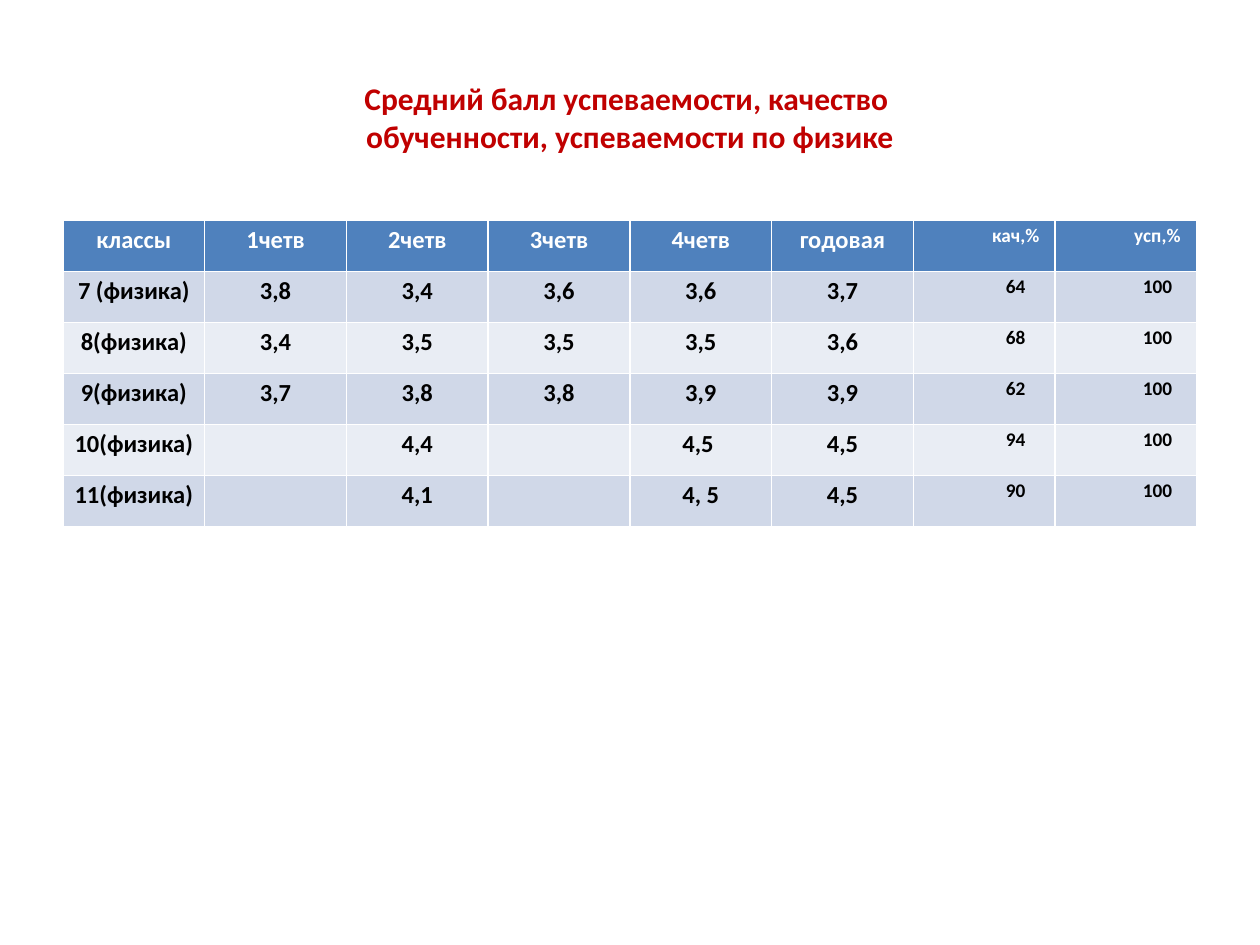
from dataclasses import dataclass

from pptx import Presentation, util as u
from pptx.dml.color import RGBColor
from pptx.enum import text
from pptx.table import _Cell

COLORS = {
    "title": "C00000",
    "header": "4F81BD",
    "header_text": "FFFFFF",
    "body_text": "000000",
    "odd_row": "D0D8E8",
    "even_row": "E9EDF4",
}
FONT = "Calibri"


@dataclass(frozen=True)
class ColumnStyle:
    size: float
    indent: float = 0


GRADE = ColumnStyle(14)
PERCENT = ColumnStyle(11, 36)
COLUMNS = [GRADE] * 6 + [PERCENT] * 2

ROWS = [
    ["классы", "1четв", "2четв", "3четв", "4четв", "годовая", "кач,%", "усп,%"],
    ["7 (физика)", "3,8", "3,4", "3,6", "3,6", "3,7", "64", "100"],
    ["8(физика)", "3,4", "3,5", "3,5", "3,5", "3,6", "68", "100"],
    ["9(физика)", "3,7", "3,8", "3,8", "3,9", "3,9", "62", "100"],
    ["10(физика)", "", "4,4", "", "4,5 ", "4,5", "94", "100"],
    ["11(физика)", "", "4,1", "", "4, 5", "4,5", "90", "100"],
]


def set_font(p, size: float, color: str) -> None:
    p.alignment = text.PP_ALIGN.CENTER
    p.font.name = FONT
    p.font.size = u.Pt(size)
    p.font.bold = True
    p.font.color.rgb = RGBColor.from_string(COLORS[color])


def fill_cell(cell: _Cell, value: str, style: ColumnStyle, fill: str, color: str) -> None:
    cell.fill.solid()
    cell.fill.fore_color.rgb = RGBColor.from_string(COLORS[fill])
    cell.margin_left = cell.margin_right = u.Pt(5.4)
    cell.margin_top = cell.margin_bottom = 0
    cell.text = value
    p = cell.text_frame.paragraphs[0]
    set_font(p, style.size, color)
    p.line_spacing = 1.15
    if style.indent:
        pPr = p._p.get_or_add_pPr()
        pPr.set("marL", str(u.Pt(style.indent)))
        pPr.set("indent", "0")


def add_title(s) -> None:
    sp = s.shapes.title
    sp.left, sp.top, sp.width, sp.height = u.Pt(36), u.Pt(21.6), u.Pt(648), u.Pt(90)
    tf = sp.text_frame
    tf.vertical_anchor = text.MSO_ANCHOR.MIDDLE
    tf.text = "Средний балл успеваемости, качество \vобученности, успеваемости по физике"
    set_font(tf.paragraphs[0], 18, "title")


def add_grades(s) -> None:
    table = s.shapes.add_table(
        len(ROWS), len(COLUMNS), u.Pt(36), u.Pt(126), u.Pt(648), u.Pt(175)
    ).table
    for i, row in enumerate(ROWS):
        if i == 0:
            fill, color = "header", "header_text"
        else:
            fill, color = ("odd_row" if i % 2 else "even_row"), "body_text"
        for j, (value, style) in enumerate(zip(row, COLUMNS)):
            fill_cell(table.cell(i, j), value, style, fill, color)


def main() -> None:
    prs = Presentation()
    prs.slide_width, prs.slide_height = u.Pt(720), u.Pt(540)
    s = prs.slides.add_slide(prs.slide_layouts[5])
    add_title(s)
    add_grades(s)
    prs.save("out.pptx")


if __name__ == "__main__":
    main()
